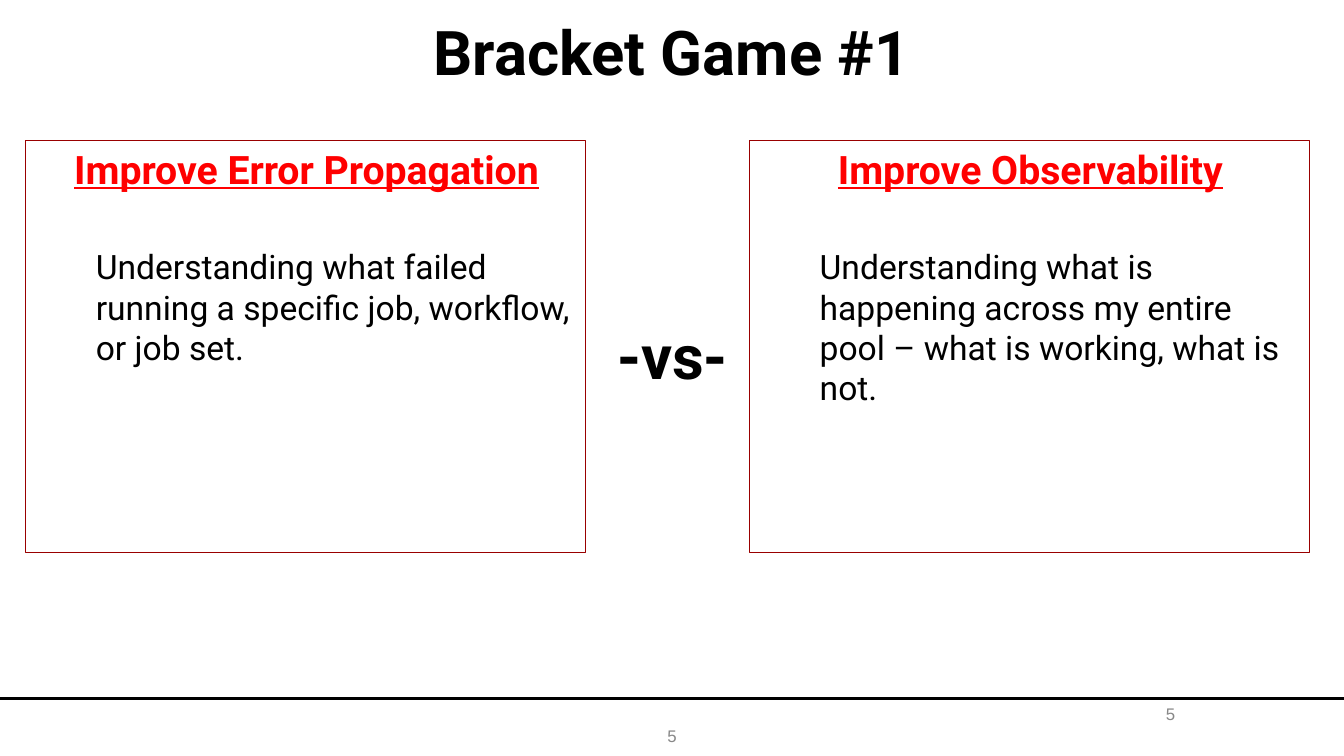
from lxml.etree import SubElement
from pptx import Presentation
from pptx.dml.color import RGBColor
from pptx.enum.shapes import MSO_CONNECTOR
from pptx.enum.text import MSO_ANCHOR, MSO_AUTO_SIZE, PP_ALIGN
from pptx.oxml.ns import qn
from pptx.util import Pt

PX = 9144  # EMU per px, 100 px to the inch
SLIDE_WIDTH, SLIDE_HEIGHT = 1333, 750
CARD_TOP, CARD_WIDTH, CARD_HEIGHT = 139, 556, 409

BLACK = RGBColor(0x00, 0x00, 0x00)
RED = RGBColor(0xFF, 0x00, 0x00)
DARK_RED = RGBColor(0x99, 0x00, 0x00)
GRAY = RGBColor(0x88, 0x88, 0x88)

CARDS = [
    (25, "Improve Error Propagation",
     "Understanding what failed running a specific job, workflow, or job set."),
    (743, "Improve Observability",
     "Understanding what is happening across my entire pool – what is working, what is not."),
]


def place(shape, left, top, width, height):
    shape.left, shape.top = left * PX, top * PX
    shape.width, shape.height = width * PX, height * PX


def style(paragraph, size, color, font_name="Roboto", bold=False, underline=False):
    font = paragraph.font if not paragraph.runs else paragraph.runs[0].font
    font.name, font.size, font.color.rgb = font_name, Pt(size), color
    font.bold, font.underline = bold, underline


def indent_without_bullet(paragraph, margin):
    properties = paragraph._p.get_or_add_pPr()
    properties.set("marL", str(margin * PX))
    properties.set("indent", "0")
    SubElement(properties, qn("a:buNone"))


def fill_centered(shape, text, size, color, font_name="Roboto", bold=False):
    """Put one centred line of text in the shape."""
    frame = shape.text_frame
    frame.text = text
    frame.word_wrap = True
    frame.auto_size = MSO_AUTO_SIZE.NONE
    frame.vertical_anchor = MSO_ANCHOR.MIDDLE
    paragraph = frame.paragraphs[0]
    paragraph.alignment = PP_ALIGN.CENTER
    style(paragraph, size, color, font_name, bold)


def add_label(slide, box, text, size, color, font_name="Roboto", bold=False):
    label = slide.shapes.add_textbox(*(length * PX for length in box))
    fill_centered(label, text, size, color, font_name, bold)


def fill_card(placeholder, left, heading, description):
    place(placeholder, left, CARD_TOP, CARD_WIDTH, CARD_HEIGHT)
    placeholder.line.color.rgb = DARK_RED
    placeholder.line.width = Pt(0.75)
    frame = placeholder.text_frame
    frame.text = heading
    frame.word_wrap = True
    frame.auto_size = MSO_AUTO_SIZE.NONE
    frame.vertical_anchor = MSO_ANCHOR.TOP

    title = frame.paragraphs[0]
    indent_without_bullet(title, 2)
    title.alignment = PP_ALIGN.CENTER
    title.space_before = Pt(0)
    style(title, 28, RED, bold=True, underline=True)

    body = frame.add_paragraph()
    body.text = description
    body.level = 1
    indent_without_bullet(body, 60)
    body.space_before = Pt(38.5)
    style(body, 24, BLACK)


def add_footer_rule(slide):
    rule = slide.shapes.add_connector(
        MSO_CONNECTOR.STRAIGHT, 0, 693 * PX, SLIDE_WIDTH * PX, 693 * PX)
    rule.line.color.rgb = BLACK
    rule.line.width = Pt(2.25)
    SubElement(rule._element.spPr, qn("a:effectLst"))


def main():
    presentation = Presentation()
    presentation.slide_width = SLIDE_WIDTH * PX
    presentation.slide_height = SLIDE_HEIGHT * PX
    two_content = presentation.slide_layouts[3]
    slide = presentation.slides.add_slide(two_content)

    add_footer_rule(slide)
    title, *card_placeholders = slide.placeholders
    place(title, 0, 0, SLIDE_WIDTH, 100)
    fill_centered(title, "Bracket Game #1", 44, BLACK, bold=True)
    for placeholder, card in zip(card_placeholders, CARDS):
        fill_card(placeholder, *card)
    add_label(slide, (591, 302, 152, 100), "-vs-", 44, BLACK, bold=True)
    for box in [(511, 710, 311, 40), (1089, 683, 144, 50)]:
        add_label(slide, box, "5", 12, GRAY, "Arial")

    presentation.save("out.pptx")


if __name__ == "__main__":
    main()
